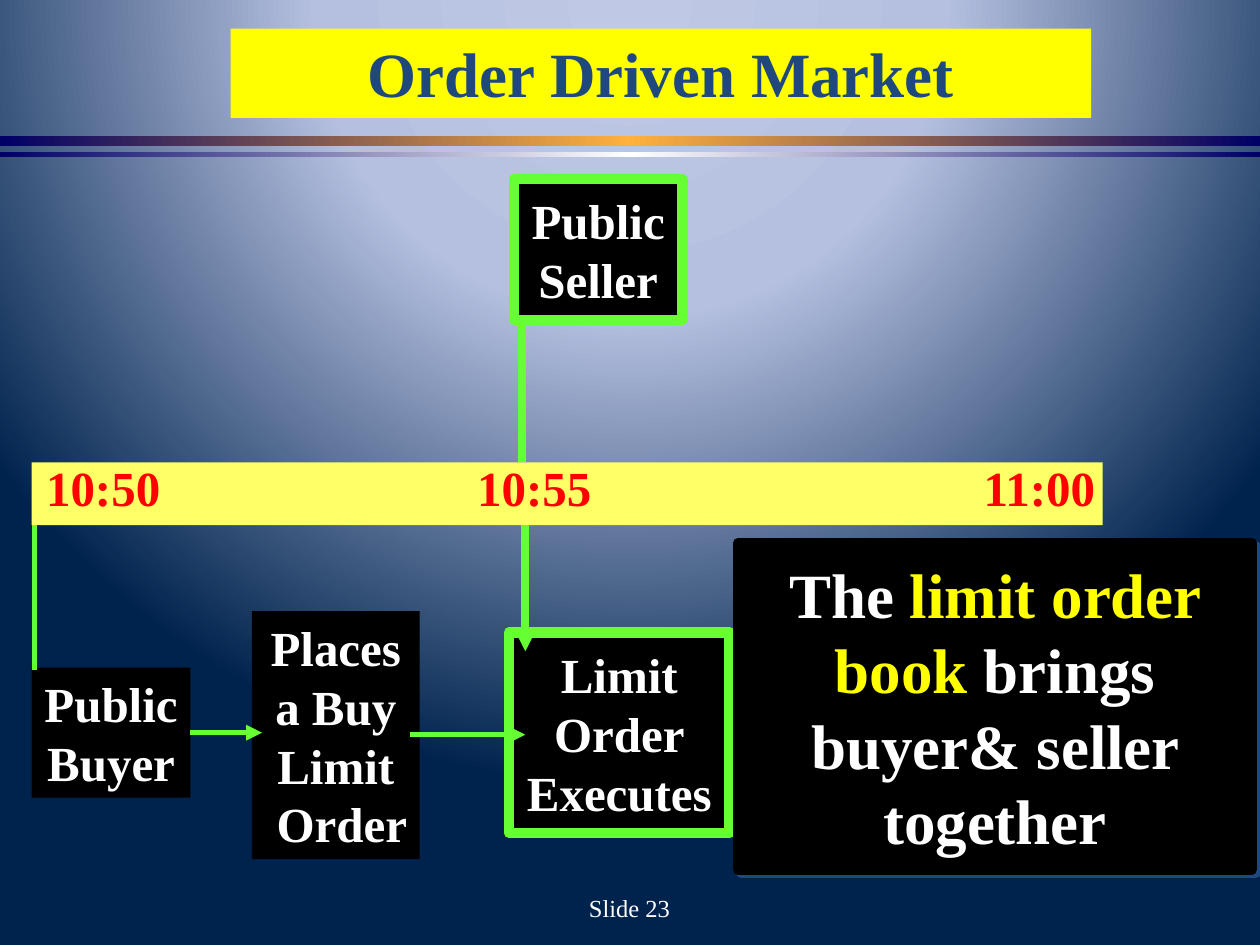
"""Build the Order Driven Market slide."""
import pptx
import pptx.dml.color
import pptx.enum.shapes
import pptx.enum.text
import pptx.oxml
import pptx.oxml.ns
import pptx.util

Cm, Pt = pptx.util.Cm, pptx.util.Pt
RGB = pptx.dml.color.RGBColor.from_string
MSO = pptx.enum.shapes.MSO_SHAPE
ANCHOR = pptx.enum.text.MSO_ANCHOR
ALIGN = pptx.enum.text.PP_ALIGN
NS = pptx.oxml.ns.nsdecls("a", "p")
C = {"black": "000000", "white": "FFFFFF", "yellow": "FFFF00", "band": "FFFF66",
     "green": "66FF33", "red": "FF0000", "blue": "1F497D", "navy": "000066",
     "orange": "FFB03D", "bg_light": "BFC9E5", "bg_mid": "B5C0E0", "bg_dark": "00234D"}


def gradient(stops, shade):
    gs = "".join(f'<a:gs pos="{pos * 1000}"><a:srgbClr val="{C[name]}"/></a:gs>'
                 for pos, name in stops)
    return f'<a:gradFill {NS} rotWithShape="1"><a:gsLst>{gs}</a:gsLst>{shade}</a:gradFill>'


def add_box(pos, fill, paragraphs=(), size=28, color="white", line=None, wrap=False,
            anchor=ANCHOR.MIDDLE, bold=True):
    x, y, w, h = map(Cm, pos)
    if fill:
        sp = s.shapes.add_shape(MSO.RECTANGLE, x, y, w, h)
        sp.shadow.inherit = False
        sp.fill.solid()
        sp.fill.fore_color.rgb = RGB(C[fill])
        if line:
            sp.line.color.rgb = RGB(C[line])
            sp.line.width = Pt(6)
        else:
            sp.line.fill.background()
    else:
        sp = s.shapes.add_textbox(x, y, w, h)
    tf = sp.text_frame
    tf.word_wrap = wrap
    tf.vertical_anchor = anchor
    for i, runs in enumerate(paragraphs):
        p = tf.add_paragraph() if i else tf.paragraphs[0]
        p.alignment = ALIGN.CENTER
        for text, name in ([(runs, color)] if isinstance(runs, str) else runs):
            r = p.add_run()
            r.text = text
            r.font.name = "Times New Roman"
            r.font.size = Pt(size)
            r.font.bold = bold
            r.font.color.rgb = RGB(C[name])
    return sp


prs = pptx.Presentation()
prs.slide_width, prs.slide_height = Cm(25.4), Cm(19.05)
s = prs.slides.add_slide(prs.slide_layouts[6])

bg_fill = gradient([(0, "bg_light"), (40, "bg_mid"), (100, "bg_dark")],
                   '<a:path path="circle"><a:fillToRect l="50000" t="-80000" r="50000" b="180000"/></a:path>')
s._element.cSld.insert(0, pptx.oxml.parse_xml(
    f"<p:bg {NS}><p:bgPr>{bg_fill}<a:effectLst/></p:bgPr></p:bg>"))

for top, height, middle in [(2.74, 0.2, "orange"), (3.07, 0.1, "white")]:
    sp = add_box((0, top, 25.4, height), "navy")
    spPr = sp._element.spPr
    spPr.replace(spPr.find(pptx.oxml.ns.qn("a:solidFill")), pptx.oxml.parse_xml(
        gradient([(0, "navy"), (50, middle), (100, "navy")], '<a:lin ang="0" scaled="1"/>')))

add_box((4.65, 0.58, 17.35, 1.8), "yellow", ["Order Driven Market"], size=36,
        color="blue", wrap=True, anchor=ANCHOR.TOP)
add_box((9.73, 17.78, 5.92, 1.02), None, ["Slide 23"], size=14, wrap=True, bold=False)

add_box((0.64, 9.32, 21.59, 1.27), "band")
times = add_box((0.43, 9.09, 24.97, 1.45), None, ["10:50\t10:55\t11:00"], color="red", wrap=True)
times.text_frame.margin_left = Cm(0.5)
p = times.text_frame.paragraphs[0]
p.alignment = ALIGN.LEFT
tabs = "".join(f'<a:tab pos="{Cm(pos)}" algn="l"/>' for pos in (8.69, 18.9))
p._p.get_or_add_pPr().append(pptx.oxml.parse_xml(f"<a:tabLst {NS}>{tabs}</a:tabLst>"))

buyer = add_box((0.64, 13.46, 3.2, 2.62), "black", ["Public", "Buyer"])
add_box((10.36, 3.61, 3.4, 2.84), "black", ["Public", "Seller"], line="green")
add_box((10.26, 12.75, 4.45, 4.04), "black", ["Limit", "Order", "Executes"], line="green")
add_box((5.08, 12.32, 3.38, 5), "black", ["Places", "a Buy", "Limit", " Order"])

for x1, y1, x2, y2, width, arrow, start in [
        (0.69, 10.59, 0.69, 13.5, 3, False, None),
        (10.52, 6.35, 10.52, 9.32, 4.5, False, None),
        (3.84, 14.77, 5.28, 14.77, 3, True, buyer),
        (8.26, 14.81, 10.59, 14.81, 3, True, None),
        (10.59, 10.59, 10.59, 13.13, 4.5, True, None)]:
    cxn = s.shapes.add_connector(pptx.enum.shapes.MSO_CONNECTOR.STRAIGHT,
                                 Cm(x1), Cm(y1), Cm(x2), Cm(y2))
    if start:
        cxn.begin_connect(start, 3)
    cxn.line.color.rgb = RGB(C["green"])
    cxn.line.width = Pt(width)
    if arrow:
        cxn.line._get_or_add_ln().append(
            pptx.oxml.parse_xml(f'<a:tailEnd {NS} type="triangle"/>'))
    cxn._element.spPr.append(pptx.oxml.parse_xml(f"<a:effectLst {NS}/>"))

note = add_box((14.88, 10.95, 10.36, 6.58), "black",
               [[("The ", "white"), ("limit order book", "yellow"),
                 (" brings buyer& seller together", "white")]],
               size=36, line="black", wrap=True)
note._element.spPr.find(pptx.oxml.ns.qn("a:effectLst")).append(pptx.oxml.parse_xml(
    f'<a:outerShdw {NS} dist="{Pt(2.8)}" dir="2700000" algn="ctr" rotWithShape="0">'
    f'<a:srgbClr val="{C["blue"]}"/></a:outerShdw>'))

prs.save("out.pptx")
